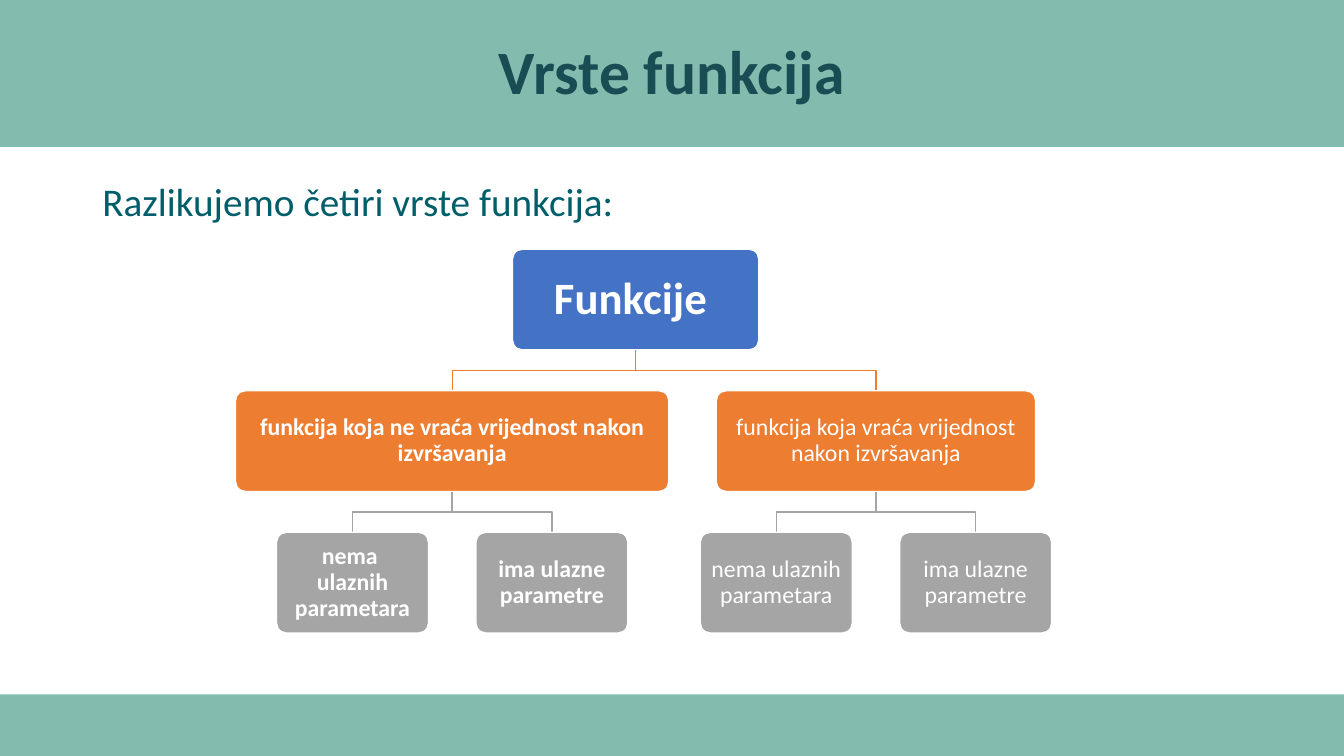
from lxml.etree import SubElement
from pptx import Presentation
from pptx.dml.color import RGBColor
from pptx.enum.shapes import MSO_SHAPE as Preset
from pptx.enum.text import MSO_ANCHOR as Anchor, MSO_AUTO_SIZE as AutoSize, PP_ALIGN as Align
from pptx.oxml.ns import qn
from pptx.util import Pt

SLIDE_WIDTH, SLIDE_HEIGHT = 960, 540
BAND, WHITE = "83BCAF", "FFFFFF"
LEVEL_COLOURS = ["4472C4", "ED7D31", "A5A5A5"]
NODE_HEIGHT, LEVEL_GAP, SIBLING_GAP = 72, 29.1, 33.8
LEAF_WIDTH = 108.6

# Each node: text, width, bold, children
FUNCTION_TREE = ("Funkcije ", 176, True, [
    ("funkcija koja ne vraća vrijednost nakon izvršavanja", 309.6, True, [
        ("nema  ulaznih parametara", LEAF_WIDTH, True, []),
        ("ima ulazne parametre", LEAF_WIDTH, True, []),
    ]),
    ("funkcija koja vraća vrijednost nakon izvršavanja", 228.2, False, [
        ("nema ulaznih parametara", LEAF_WIDTH, False, []),
        ("ima ulazne parametre", LEAF_WIDTH, False, []),
    ]),
])


def colour(hex_code):
    return RGBColor.from_string(hex_code)


def apply_format(target, values):
    for name, value in values.items():
        setattr(target, name, value)


def write(frame, text, size, hex_code, bold, align, anchor, inset=None):
    """Fill a text frame with one formatted paragraph."""
    apply_format(frame, {"text": text, "word_wrap": True,
                         "auto_size": AutoSize.NONE, "vertical_anchor": anchor})
    if inset is not None:
        sides = ("left", "right", "top", "bottom")
        apply_format(frame, {f"margin_{side}": Pt(inset) for side in sides})
    paragraph = frame.paragraphs[0]
    apply_format(paragraph, {"alignment": align, "line_spacing": 0.9, "space_before": Pt(0)})
    apply_format(paragraph.font, {"name": "Calibri", "size": Pt(size), "bold": bold})
    paragraph.font.color.rgb = colour(hex_code)
    return paragraph


def place(placeholder, left, top, width, height):
    apply_format(placeholder, {"left": Pt(left), "top": Pt(top),
                               "width": Pt(width), "height": Pt(height)})


def add_band(slide, top, height):
    """Add a full-width colour band behind the placeholders."""
    band = slide.shapes.add_shape(Preset.RECTANGLE, 0, Pt(top), Pt(SLIDE_WIDTH), Pt(height))
    band.shadow.inherit = False
    band.fill.solid()
    band.fill.fore_color.rgb = colour(BAND)
    band.line.fill.background()
    slide.shapes.element.insert(2, band.element)


def add_heading(slide, left, top, width, height):
    title = slide.shapes.title
    place(title, left, top, width, height)
    write(title.text_frame, "Vrste funkcija", 44, "194C53", True, Align.CENTER, Anchor.MIDDLE)


def add_intro(slide, left, top, width, height):
    intro = slide.placeholders[1]
    place(intro, left, top, width, height)
    paragraph = write(intro.text_frame, "Razlikujemo četiri vrste funkcija:", 28,
                      "005E6A", False, Align.LEFT, Anchor.TOP)
    properties = paragraph._p.get_or_add_pPr()
    properties.set("marL", "0")
    properties.set("indent", "0")
    SubElement(properties, qn("a:buNone"))


def add_branch_line(slide, parent_centre, child_centre, top, hex_code):
    bottom, middle = top + LEVEL_GAP, top + LEVEL_GAP / 2
    bends = [(parent_centre, middle), (child_centre, middle), (child_centre, bottom)]
    builder = slide.shapes.build_freeform(Pt(parent_centre), Pt(top))
    builder.add_line_segments([(Pt(x), Pt(y)) for x, y in bends], close=False)
    branch = builder.convert_to_shape()
    branch.shadow.inherit = False
    branch.fill.background()
    branch.line.color.rgb = colour(hex_code)
    branch.line.width = Pt(1)


def add_node(slide, node, centre, top, level=0):
    """Draw a node and, centred beneath it, the row of its children."""
    text, width, bold, children = node
    box = slide.shapes.add_shape(Preset.ROUNDED_RECTANGLE, Pt(centre - width / 2), Pt(top),
                                 Pt(width), Pt(NODE_HEIGHT))
    box.adjustments[0] = 0.1
    box.shadow.inherit = False
    box.fill.solid()
    box.fill.fore_color.rgb = colour(LEVEL_COLOURS[level])
    box.line.color.rgb = colour(WHITE)
    box.line.width = Pt(1)
    size, inset = (17, 5) if level else (32, 9)
    write(box.text_frame, text, size, WHITE, bold, Align.CENTER, Anchor.MIDDLE, inset)

    row_width = sum(child[1] for child in children) + SIBLING_GAP * (len(children) - 1)
    child_left = centre - row_width / 2
    bottom = top + NODE_HEIGHT
    for child in children:
        child_centre = child_left + child[1] / 2
        add_branch_line(slide, centre, child_centre, bottom, LEVEL_COLOURS[level + 1])
        add_node(slide, child, child_centre, bottom + LEVEL_GAP, level + 1)
        child_left += child[1] + SIBLING_GAP


def main():
    deck = Presentation()
    deck.slide_width, deck.slide_height = Pt(SLIDE_WIDTH), Pt(SLIDE_HEIGHT)
    slide = deck.slides.add_slide(deck.slide_layouts[1])
    add_band(slide, 0, 105)
    add_band(slide, 496, 44)
    add_heading(slide, 66, 15, 828, 76)
    add_intro(slide, 66, 126.7, 828, 50)
    add_node(slide, FUNCTION_TREE, centre=454, top=178)
    deck.save("out.pptx")


if __name__ == "__main__":
    main()
